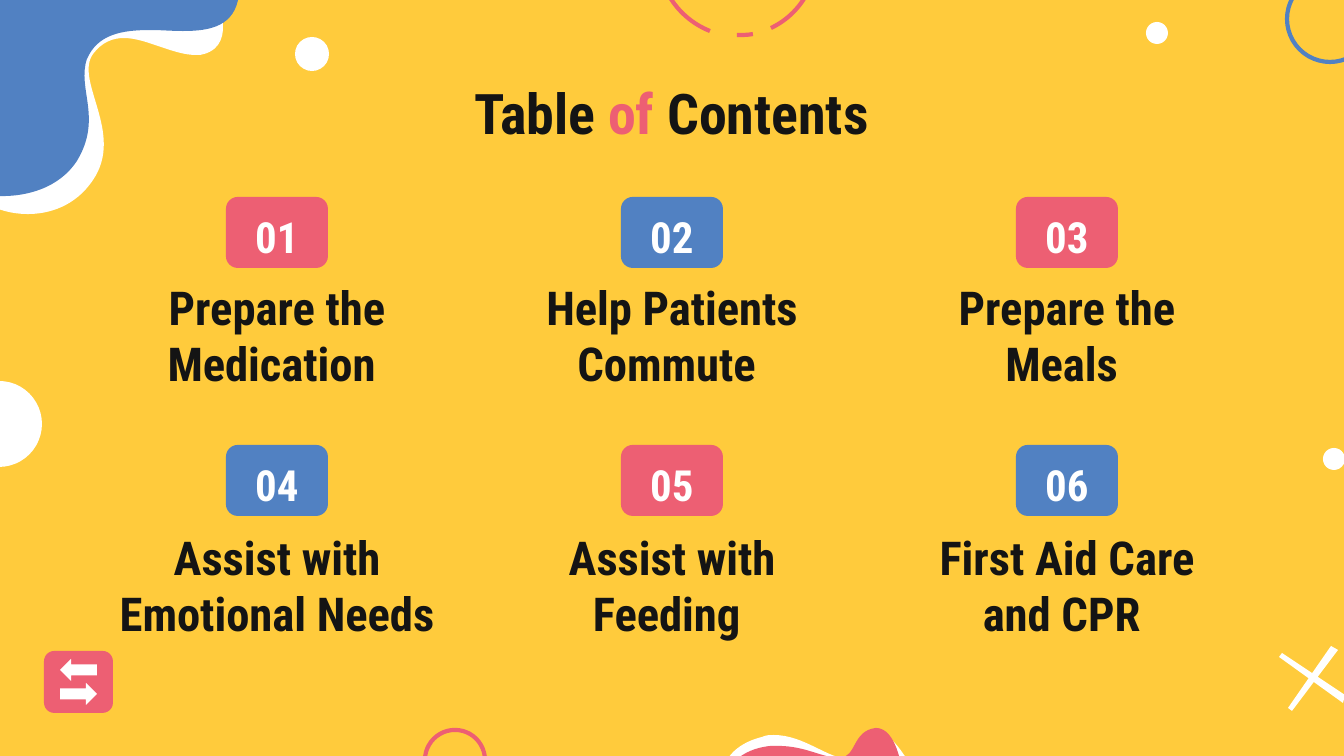
from lxml.etree import SubElement
from pptx import Presentation
from pptx.dml.color import RGBColor
from pptx.enum.shapes import MSO_SHAPE as SHAPE
from pptx.enum.text import MSO_ANCHOR as ANCHOR, MSO_AUTO_SIZE as AUTO, PP_ALIGN as ALIGN
from pptx.oxml.ns import qn
from pptx.util import Pt

YELLOW, BLUE, RED, WHITE, INK = "FFCB3C", "5181C2", "ED5F73", "FFFFFF", "141414"
FONT = "Roboto Condensed"
PX = 914400 / 134.4
WIDTH, HEIGHT = 1344, 756

TITLE = [("Table ", INK), ("of", RED), (" Contents", INK)]
TOPICS = [
    ["Prepare the Medication ", "Help Patients Commute ", "Prepare the Meals "],
    ["Assist with Emotional Needs", "Assist with Feeding ", "First Aid Care and CPR "],
]
ROWS = [(197, 299), (445, 549)]  # top of badge, top of heading
FIRST_CENTER, COLUMN_STEP = 277, 395
BADGE_W, BADGE_H = 102, 71
HEADING_W, HEADING_H = 344, 71

# Outlines: a pair is a line to that point, six numbers are a Bezier curve.
BLOBS = [
    (WHITE, [(-4, -5), (-4, 208), (-4, 208, 9, 214, 28, 214), (48, 214, 75, 207, 93, 180),
             (125, 133, 74, 81, 93, 54), (102, 42, 113, 38, 124, 38),
             (146, 38, 173, 55, 196, 55), (199, 55, 202, 55, 204, 54),
             (239, 44, 215, -5, 215, -5)]),
    (BLUE, [(-4, -5), (-4, 196), (-4, 196, -1, 196, 3, 196), (15, 196, 55, 194, 77, 161),
            (103, 118, 77, 89, 87, 59), (98, 34, 122, 30, 151, 30),
            (161, 30, 172, 31, 183, 31), (211, 31, 235, 26, 239, -5)]),
    (WHITE, [(774, 735), (770, 735, 766, 735, 762, 737), (726, 746, 723, 770, 723, 770),
             (913, 770), (913, 770, 895, 735, 882, 735), (880, 735, 879, 735, 878, 737),
             (864, 743, 872, 758, 849, 759), (828, 759, 804, 735, 774, 735)]),
    (RED, [(876, 728), (852, 731, 857, 757, 840, 758), (822, 758, 806, 746, 778, 746),
           (777, 746, 774, 746, 771, 746), (738, 749, 728, 770, 728, 770),
           (902, 770), (902, 770, 897, 728, 876, 728)]),
    (WHITE, [(1331, 646), (1288, 708), (1292, 711), (1338, 650)]),
    (WHITE, [(1282, 653), (1279, 657), (1343, 703), (1345, 695)]),
]
DASHES = [
    [(753, 34), (748, 35, 742, 35, 737, 35)],
    [(737, -122), (773, -122, 805, -97, 814, -62), (823, -26, 805, 12, 771, 28)],
    [(710, 31), (675, 17, 653, -19, 660, -56), (665, -94, 698, -122, 737, -122)],
]
DOTS = [(312, 54, 17), (1157, 33, 11), (1334, 459, 11), (-1, 424, 43)]  # centre, radius
RINGS = [(455, 760, 30, RED), (1330, 19, 43, BLUE)]


def px(n):
    return round(n * PX)


def rgb(value):
    return RGBColor.from_string(value)


def paint(s, fill=None, line=None):
    s.shadow.inherit = False
    if fill:
        s.fill.solid()
        s.fill.fore_color.rgb = rgb(fill)
    else:
        s.fill.background()
    if line:
        s.line.color.rgb = rgb(line)
        s.line.width = Pt(2.25)
    else:
        s.line.fill.background()
    return s


def add_shape(slide, kind, x, y, w, h, **colors):
    return paint(slide.shapes.add_shape(kind, px(x), px(y), px(w), px(h)), **colors)


def add_circle(slide, x, y, radius, **colors):
    add_shape(slide, SHAPE.OVAL, x - radius, y - radius, 2 * radius, 2 * radius, **colors)


def add_outline(slide, outline, close=True, **colors):
    """Join the end points by lines, then turn each curved segment into a Bezier."""
    start, *segments = outline
    builder = slide.shapes.build_freeform(px(start[0]), px(start[1]))
    builder.add_line_segments([(px(seg[-2]), px(seg[-1])) for seg in segments], close=close)
    s = paint(builder.convert_to_shape(), **colors)
    lines = list(s._element.iter(qn("a:lnTo")))
    for line, seg in zip(lines, segments):
        if len(seg) == 6:
            line.tag = qn("a:cubicBezTo")
            line.clear()
            for x, y in zip(seg[::2], seg[1::2]):
                SubElement(line, qn("a:pt"), x=str(px(x) - s.left), y=str(px(y) - s.top))


def write(s, runs, size, anchor=ANCHOR.MIDDLE, bottom=13):
    tf = s.text_frame
    tf.word_wrap, tf.auto_size, tf.vertical_anchor = True, AUTO.NONE, anchor
    tf.margin_left = tf.margin_right = tf.margin_top = px(13)
    tf.margin_bottom = px(bottom)
    p = tf.paragraphs[0]
    p.alignment = ALIGN.CENTER
    for text, color in runs:
        r = p.add_run()
        r.text = text
        r.font.name, r.font.size, r.font.bold = FONT, Pt(size), True
        r.font.color.rgb = rgb(color)


def add_decoration(slide):
    for color, outline in BLOBS:
        add_outline(slide, outline, fill=color)
    for dash in DASHES:
        add_outline(slide, dash, close=False, line=RED)
    for dot in DOTS:
        add_circle(slide, *dot, fill=WHITE)
    for *ring, color in RINGS:
        add_circle(slide, *ring, line=color)


def add_topics(slide):
    for row, (topics, (badge_top, heading_top)) in enumerate(zip(TOPICS, ROWS)):
        for col, topic in enumerate(topics):
            center = FIRST_CENTER + col * COLUMN_STEP
            number = row * len(topics) + col
            badge = add_shape(slide, SHAPE.ROUNDED_RECTANGLE, center - BADGE_W / 2, badge_top,
                              BADGE_W, BADGE_H, fill=BLUE if number % 2 else RED)
            write(badge, [(f"{number + 1:02}", WHITE)], 23, bottom=6)
            heading = slide.shapes.add_textbox(px(center - HEADING_W / 2), px(heading_top),
                                               px(HEADING_W), px(HEADING_H))
            write(heading, [(topic, INK)], 25)


def add_swap_icon(slide):
    add_shape(slide, SHAPE.ROUNDED_RECTANGLE, 44, 651, 69, 62, fill=RED)
    for kind, top in [(SHAPE.LEFT_ARROW, 659), (SHAPE.RIGHT_ARROW, 683)]:
        add_shape(slide, kind, 60, top, 37, 22, fill=WHITE)


def main():
    prs = Presentation()
    prs.slide_width, prs.slide_height = px(WIDTH), px(HEIGHT)
    slide = prs.slides.add_slide(prs.slide_layouts[5])
    slide.background.fill.solid()
    slide.background.fill.fore_color.rgb = rgb(YELLOW)
    add_decoration(slide)
    title = slide.shapes.title
    title.left, title.top, title.width, title.height = px(105), px(66), px(1133), px(85)
    write(title, TITLE, 30, anchor=ANCHOR.TOP)
    add_topics(slide)
    add_swap_icon(slide)
    prs.save("out.pptx")


if __name__ == "__main__":
    main()
